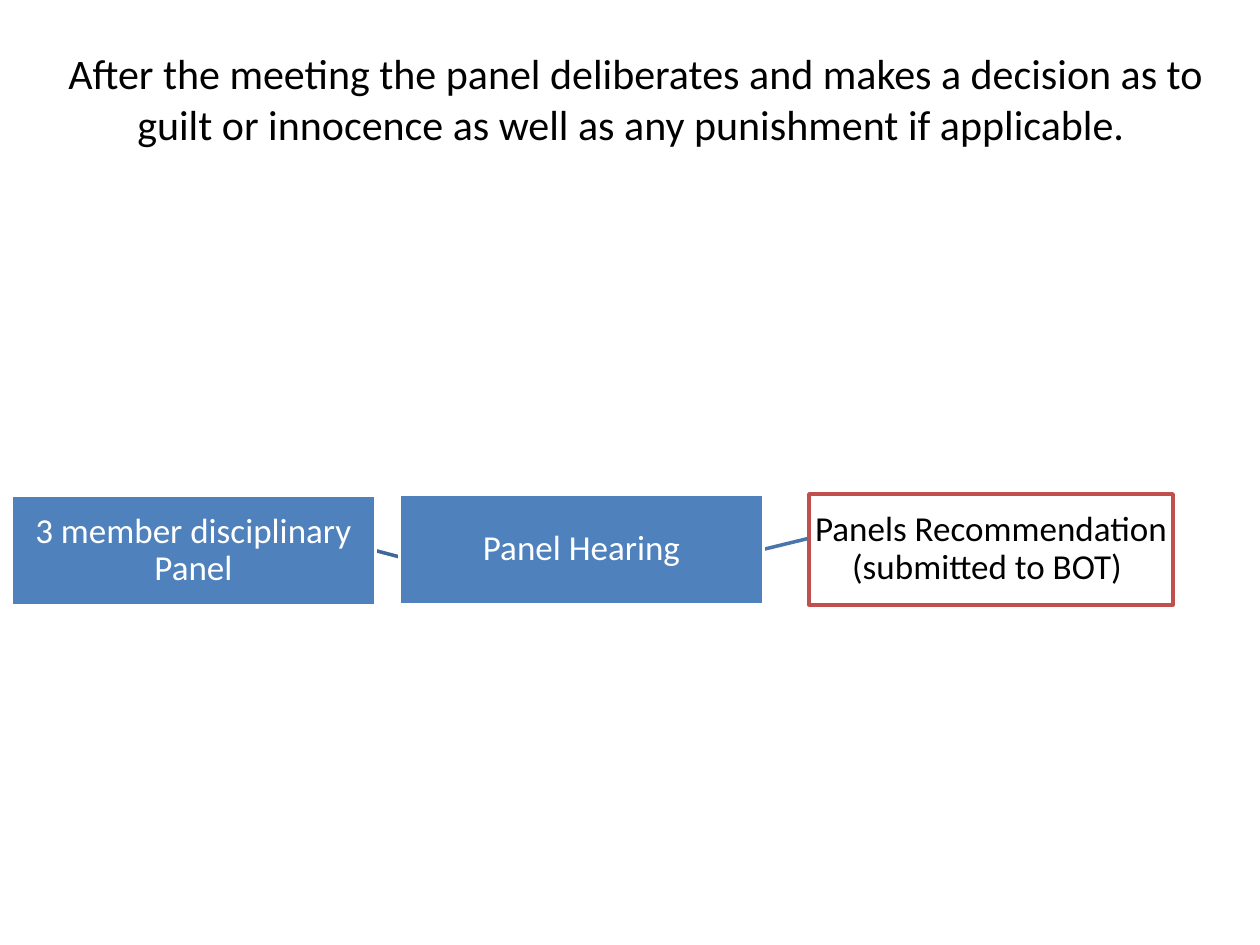
from pptx import Presentation
from pptx.dml.color import RGBColor
from pptx.enum.shapes import MSO_CONNECTOR as Link, MSO_SHAPE as Shape
from pptx.enum.text import MSO_ANCHOR as Anchor, PP_ALIGN as Align
from pptx.util import Inches, Pt
from lxml.etree import SubElement
from pptx.oxml.ns import qn

TITLE = ("After the meeting the panel deliberates and makes a decision as to "
         "guilt or innocence as well as any punishment if applicable. ")
# text, left, top, fill, line, font colour
STEPS = [
    ("3 member disciplinary Panel", 0.09, 3.93, "4F81BD", "FFFFFF", "FFFFFF"),
    ("Panel Hearing", 3.17, 3.92, "4F81BD", "FFFFFF", "FFFFFF"),
    ("Panels Recommendation (submitted to BOT) ", 6.42, 3.92,
     "FFFFFF", "C0504D", "000000"),
]
# from step, side, to step, side, colour
LINKS = [(1, 3, 2, 0, "4875AC"), (0, 3, 1, 2, "3F6797")]
WIDE, HIGH = 2.89, 0.88


def color(code):
    return RGBColor.from_string(code)


def set_line(part, code):
    part.line.color.rgb = color(code)
    part.line.width = Pt(2)


def set_text(frame, text, size, code):
    frame.word_wrap = True
    frame.text = text
    par = frame.paragraphs[0]
    par.alignment = Align.CENTER
    font = par.runs[0].font
    font.name, font.size = "Calibri", Pt(size)
    font.color.rgb = color(code)
    return par


deck = Presentation()
deck.slide_width, deck.slide_height = Inches(10), Inches(7.5)
slide = deck.slides.add_slide(deck.slide_layouts[6])
shapes = slide.shapes

# Links come first so that they lie behind the boxes
lines = []
for *_, code in LINKS:
    line = shapes.add_connector(Link.STRAIGHT, 0, 0, 0, 0)
    set_line(line, code)
    SubElement(line._element.spPr, qn("a:effectLst"))
    lines.append(line)

# Step boxes
boxes = []
for text, left, top, fill, edge, ink in STEPS:
    box = shapes.add_shape(Shape.RECTANGLE, Inches(left), Inches(top),
                           Inches(WIDE), Inches(HIGH))
    box.shadow.inherit = False
    box.fill.solid()
    box.fill.fore_color.rgb = color(fill)
    set_line(box, edge)
    frame = box.text_frame
    frame.vertical_anchor = Anchor.MIDDLE
    frame.margin_left = frame.margin_right = Inches(0.01)
    frame.margin_top = frame.margin_bottom = Inches(0.01)
    set_text(frame, text, 20, ink).line_spacing = 0.9
    boxes.append(box)

# Join the links to the boxes
for line, (start, out, end, into, _) in zip(lines, LINKS):
    line.begin_connect(boxes[start], out)
    line.end_connect(boxes[end], into)

# Title
title = shapes.add_textbox(Inches(0.42), Inches(0.33), Inches(9.25), Inches(0.91))
set_text(title.text_frame, TITLE, 24, "000000")

deck.save("out.pptx")
